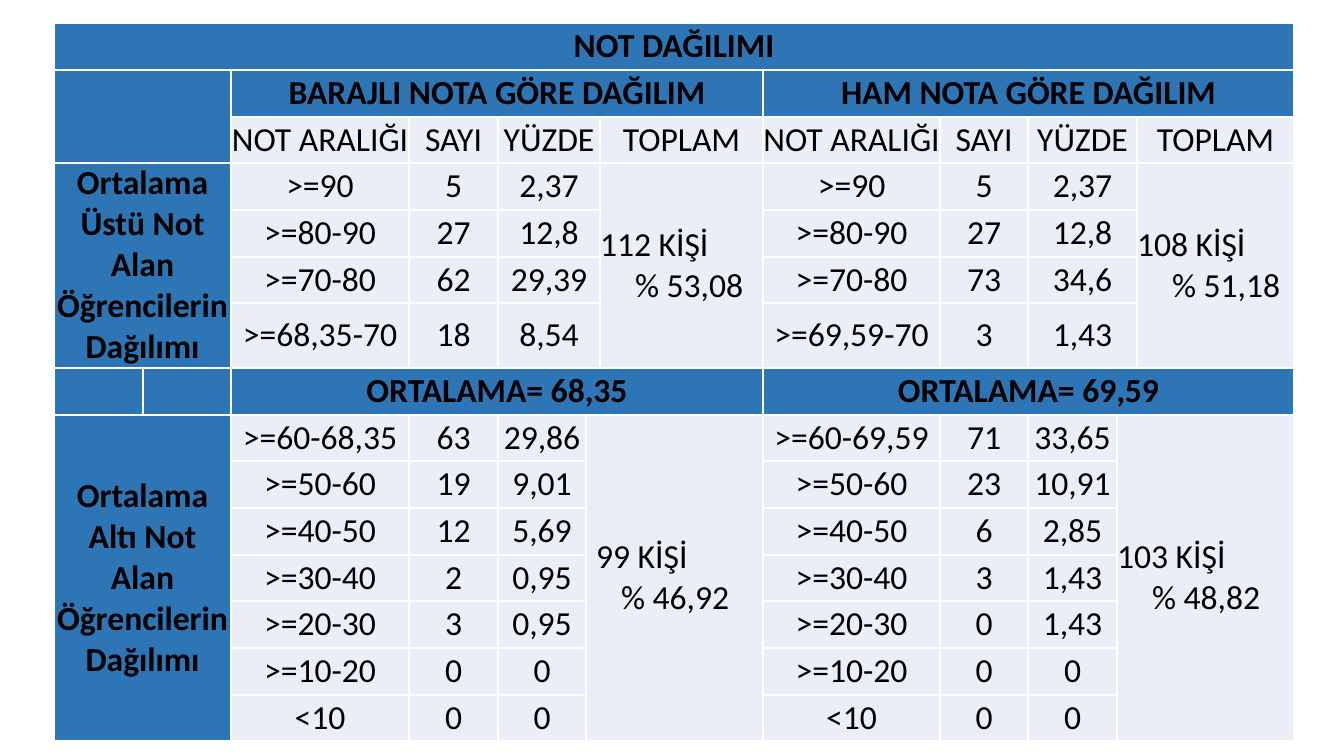
from pptx import Presentation, util as u
from pptx.dml.color import RGBColor
from pptx.enum import text as t
from pptx.oxml import parse_xml
from pptx.oxml.ns import nsdecls

PX = 9071  # EMU in one px, at 100.8 px to the inch
BLUE, PALE, WHITE, BLACK = "2E75B6", "EAEFF7", "FFFFFF", "000000"

pres = Presentation()
pres.slide_width, pres.slide_height = u.Inches(13.33), u.Inches(7.5)
slide = pres.slides.add_slide(pres.slide_layouts[6])

wide = [89, 88, 178, 89, 88, 14, 163, 177, 88, 89, 20, 157]
high = [47, 47, 46] * 5
high[6] = 65
frame = slide.shapes.add_table(len(high), len(wide), 54 * PX, 23 * PX,
                               sum(wide) * PX, sum(high) * PX)
grid = frame.table
grid.first_row = grid.horz_banding = False
for col, size in zip(grid.columns, wide):
    col.width = size * PX
for row, size in zip(grid.rows, high):
    row.height = size * PX


def paint(cell, shade):
    cell.fill.solid()
    cell.fill.fore_color.rgb = RGBColor.from_string(shade)


def put(row, col, lines, head=False, down=1, over=1):
    """Merge a block of cells, then write its lines into it."""
    cell = grid.cell(row, col)
    if down > 1 or over > 1:
        cell.merge(grid.cell(row + down - 1, col + over - 1))
    paint(cell, BLUE if head else PALE)
    para = cell.text_frame.paragraphs[0]
    para.alignment = t.PP_ALIGN.CENTER
    for i, line in enumerate(lines):
        if i:
            para.add_line_break()
        run = para.add_run()
        run.text = line
        font = run.font
        font.name, font.size, font.bold = "Calibri", u.Pt(24), head
        font.color.rgb = RGBColor.from_string(BLACK)
    return para


for cell in grid.iter_cells():
    cell.margin_left = cell.margin_right = cell.margin_top = cell.margin_bottom = 0
    cell.vertical_anchor = t.MSO_ANCHOR.MIDDLE
    for side in ("lnL", "lnR", "lnT", "lnB"):
        cell._tc.get_or_add_tcPr().append(parse_xml(
            f'<a:{side} {nsdecls("a")} w="12700"><a:solidFill>'
            f'<a:srgbClr val="{WHITE}"/></a:solidFill></a:{side}>'))
    paint(cell, PALE)

put(0, 0, ["NOT DAĞILIMI"], True, over=12)
put(1, 0, [], True, 2, 2)
put(3, 0, ["Ortalama Üstü Not Alan Öğrencilerin Dağılımı"], True, 4, 2)
for col in range(2):
    put(7, col, [], True)
put(8, 0, ["Ortalama Altı Not Alan Öğrencilerin Dağılımı"], True, 7, 2)

# First column, heading, mean, rows above and below it, then
# the two totals: row, column shift, row span, column span, inset, lines
halves = [
    (2, "BARAJLI NOTA GÖRE DAĞILIM", "68,35",
     [("5", "2,37"), ("27", "12,8"), ("62", "29,39"), ("18", "8,54")],
     [("63", "29,86"), ("19", "9,01"), ("12", "5,69"), ("2", "0,95"),
      ("3", "0,95"), ("0", "0"), ("0", "0")],
     [(3, 4, 4, 1, 0, ["112 KİŞİ", "% 53,08"]),
      (8, 3, 7, 2, 10, ["99 KİŞİ", "% 46,92"])]),
    (7, "HAM NOTA GÖRE DAĞILIM", "69,59",
     [("5", "2,37"), ("27", "12,8"), ("73", "34,6"), ("3", "1,43")],
     [("71", "33,65"), ("23", "10,91"), ("6", "2,85"), ("3", "1,43"),
      ("0", "1,43"), ("0", "0"), ("0", "0")],
     [(3, 4, 4, 1, 0, ["108 KİŞİ", "% 51,18"]),
      (8, 3, 7, 2, 0, ["103 KİŞİ", "% 48,82"])]),
]
for left, name, mean, above, below, sums in halves:
    put(1, left, [name], True, over=5)
    put(2, left, ["NOT ARALIĞI"])
    put(2, left + 1, ["SAYI"])
    put(2, left + 2, ["YÜZDE"], over=2)
    put(2, left + 4, ["TOPLAM"])
    put(7, left, [f"ORTALAMA= {mean}"], True, over=5)
    high_bands = [">=90", ">=80-90", ">=70-80", f">={mean}-70"]
    low_bands = [f">=60-{mean}", ">=50-60", ">=40-50", ">=30-40",
                 ">=20-30", ">=10-20", "<10"]
    for top, bands, rows, over in ((3, high_bands, above, 2),
                                   (8, low_bands, below, 1)):
        for row, (band, (count, share)) in enumerate(zip(bands, rows), top):
            put(row, left, [band])
            put(row, left + 1, [count])
            put(row, left + 2, [share], over=over)
    for row, shift, down, over, inset, lines in sums:
        para = put(row, left + shift, lines, False, down, over)
        para.alignment = t.PP_ALIGN.LEFT
        props = para._p.get_or_add_pPr()
        props.set("marL", str(35 * PX))
        props.set("indent", str((inset - 35) * PX))

pres.save("out.pptx")
